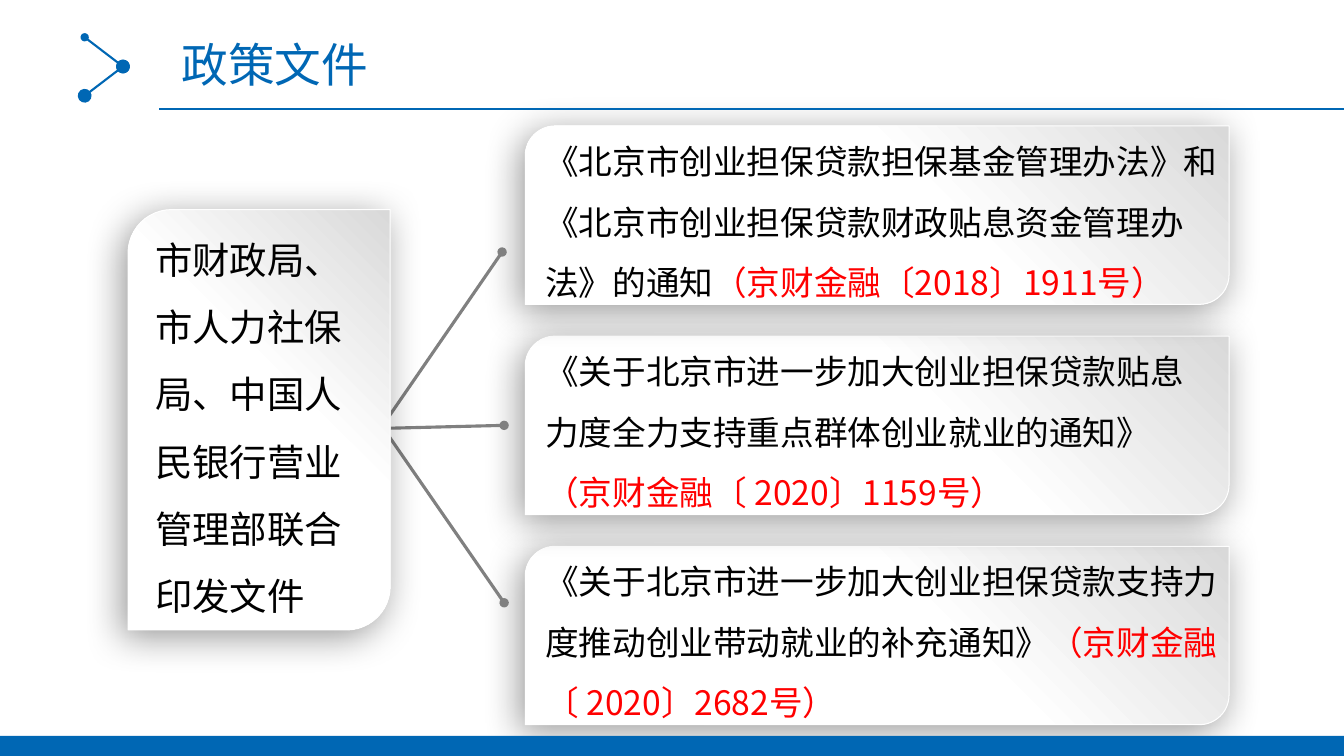
from lxml import etree
from pptx import Presentation
from pptx.dml.color import RGBColor
from pptx.enum.shapes import MSO_CONNECTOR as Line, MSO_SHAPE as Shape
from pptx.enum.text import MSO_AUTO_SIZE as AutoSize
from pptx.oxml.ns import qn
from pptx.util import Inches, Pt

BLUE, GRAY, BLACK, RED = "0067B4", "808080", "000000", "FF0000"
BODY_FONT = "Noto Sans CJK SC"

TITLE = "政策文件"
ISSUERS = "市财政局、市人力社保局、中国人民银行营业管理部联合印发文件"
# name of the notice, its number, text width
NOTICES = [
    ("《北京市创业担保贷款担保基金管理办法》和《北京市创业担保贷款财政贴息资金管理办法》的通知",
     "（京财金融〔2018〕1911号）", 6.87),
    ("《关于北京市进一步加大创业担保贷款贴息力度全力支持重点群体创业就业的通知》",
     "（京财金融〔 2020〕1159号）", 6.66),
    ("《关于北京市进一步加大创业担保贷款支持力度推动创业带动就业的补充通知》",
     "（京财金融〔 2020〕2682号）", 6.87),
]
NOTICE_LEFT, NOTICE_TOP, NOTICE_STEP = 5.21, 1.25, 2.085
# start and end of each branch
BRANCHES = [((3.79, 4.23), (4.98, 2.5)),
            ((3.79, 4.25), (5, 4.22)),
            ((3.79, 4.23), (5, 5.98))]
# start, end, size of the dot at each end
LOGO_STROKES = [((0.84, 0.37), (1.22, 0.66), "med", "lg"),
                ((1.22, 0.66), (0.84, 0.95), "lg", "lg")]


def rgb(code):
    return RGBColor.from_string(code)


def add_sub(parent, tag, **attributes):
    child = etree.SubElement(parent, qn(tag))
    for name, value in attributes.items():
        child.set(name, str(value))
    return child


def add_line(page, start, end, color, width, head=None, tail=None):
    """Draw a straight line; head and tail are the sizes of its end dots."""
    line = page.shapes.add_connector(
        Line.STRAIGHT, *(Inches(value) for value in (*start, *end)))
    line.line.color.rgb = rgb(color)
    line.line.width = Pt(width)
    outline = line.line._get_or_add_ln()
    for tag, size in (("a:headEnd", head), ("a:tailEnd", tail)):
        if size:
            add_sub(outline, tag, type="oval", w=size, len=size)
    add_sub(line._element.spPr, "a:effectLst")


def add_card(page, left, top, width, height):
    """Draw a gray-to-white card with two round corners and a soft shadow."""
    card = page.shapes.add_shape(
        Shape.ROUND_2_DIAG_RECTANGLE,
        *(Inches(value) for value in (left, top, width, height)))
    card.fill.gradient()
    card.fill.gradient_angle = 225
    for stop, color, position in zip(card.fill.gradient_stops,
                                     ("D9D9D9", "FFFFFF"), (0, 0.42)):
        stop.color.rgb = rgb(color)
        stop.position = position
    card.line.color.rgb = rgb("FFFFFF")
    card.line.width = Pt(0.75)
    card.shadow.inherit = False
    effects = card._element.spPr.find(qn("a:effectLst"))
    shadow = add_sub(effects, "a:outerShdw", blurRad=Pt(27), dist=Pt(6),
                     dir=135 * 60000, algn="tr", rotWithShape=0)
    color = add_sub(shadow, "a:srgbClr", val=BLACK)
    add_sub(color, "a:alpha", val=40000)


def add_text(page, left, top, width, height, runs, size, font=BODY_FONT,
             spacing=1.5, wrap=True):
    """Add one paragraph made of (text, color) runs."""
    box = page.shapes.add_textbox(
        *(Inches(value) for value in (left, top, width, height)))
    frame = box.text_frame
    frame.word_wrap = wrap
    frame.auto_size = AutoSize.SHAPE_TO_FIT_TEXT
    para = frame.paragraphs[0]
    para.line_spacing = spacing
    for text, color in runs:
        span = para.add_run()
        span.text = text
        span.font.size = Pt(size)
        span.font.name = font
        span.font.color.rgb = rgb(color)
        add_sub(span._r.get_or_add_rPr(), "a:ea", typeface=BODY_FONT)
    return frame


def main():
    deck = Presentation()
    deck.slide_width, deck.slide_height = Inches(13.33), Inches(7.5)
    page = deck.slides.add_slide(deck.slide_layouts[6])

    notice_tops = [NOTICE_TOP + NOTICE_STEP * row for row in range(len(NOTICES))]
    for top in reversed(notice_tops):
        add_card(page, NOTICE_LEFT, top, 6.98, 1.77)

    footer = page.shapes.add_shape(
        Shape.RECTANGLE, 0, Inches(7.3), deck.slide_width, Inches(0.22))
    footer.fill.solid()
    footer.fill.fore_color.rgb = rgb(BLUE)
    footer.line.fill.background()
    footer.shadow.inherit = False

    for start, end, head, tail in LOGO_STROKES:
        add_line(page, start, end, BLUE, 1.5, head, tail)
    add_line(page, (1.58, 1.08), (13.33, 1.08), BLUE, 1)
    title = add_text(page, 1.67, 0.29, 2.14, 0.7, [(TITLE, BLUE)], 33.3,
                     font="Arial", spacing=1.0, wrap=False)
    title.margin_left = title.margin_right = Inches(0.13)
    title.margin_top = title.margin_bottom = Inches(0.07)

    for start, end in BRANCHES:
        add_line(page, start, end, GRAY, 2.25, tail="med")
    add_card(page, 1.27, 2.08, 2.6, 4.17)

    for top, (name, number, width) in zip(notice_tops, NOTICES):
        add_text(page, NOTICE_LEFT + 0.1, top - 0.1, width, 1.92,
                 [(name, BLACK), (number, RED)], 24)
    add_text(page, 1.44, 2.08, 2.19, 4.14, [(ISSUERS, BLACK)], 26.7)

    deck.save("out.pptx")


if __name__ == "__main__":
    main()
